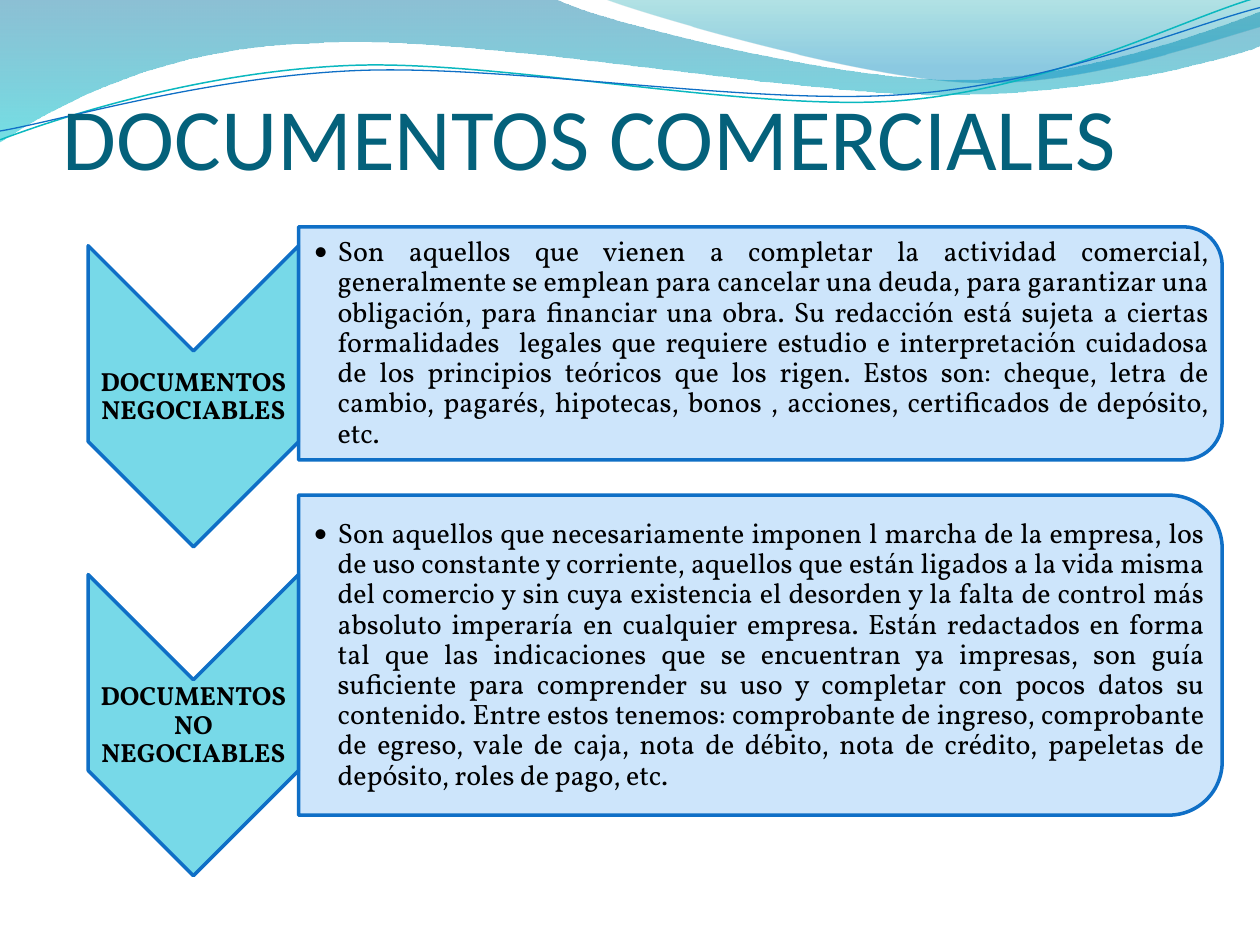
"""Build the slide on negotiable and non-negotiable commercial documents."""
from dataclasses import dataclass
from math import cos, radians, sin
from typing import NamedTuple

from lxml import etree
from pptx import Presentation
from pptx import util as u
from pptx.dml.color import RGBColor
from pptx.enum import shapes as sh, text as tx
from pptx.oxml.ns import qn


@dataclass(frozen=True)
class Theme:
    """Colours, fonts and type sizes."""
    title: str = "04617B"
    ink: str = "000000"
    arrow: str = "77D9E8"
    panel: str = "C8E3FB"
    edge: str = "0F6FC6"
    teal: str = "0AB8BF"
    head: str = "Calibri"
    body: str = "Vollkorn"
    big: float = 50
    mid: float = 16
    small: float = 15


class Box(NamedTuple):
    """A rectangle in inches."""
    x: float
    y: float
    w: float
    h: float


class Stop(NamedTuple):
    """A gradient stop with its opacity in percent."""
    pos: float
    rgb: str
    alpha: int


class Wave(NamedTuple):
    """An outline of points and cubic curves, either filled or stroked."""
    start: tuple
    legs: list
    stops: tuple = ()
    rgb: str = ""
    width: float = 0
    tilt: float = 0


class Topic(NamedTuple):
    """An arrow label with its panel of text."""
    label: str
    note: str
    top: float
    panel: Box


T = Theme()
HUB = (4.99, 0.58)

WAVES = [
    Wave((0, 0), [(4.4, -0.01), (4.76, 0.17, 6.64, 0.63, 7.58, 0.63),
                  (8.53, 0.63, 9.58, 0.26, 10, 0.09), (10.01, 0.36),
                  (9.83, 0.44, 8.7, 0.76, 7.46, 0.75),
                  (6.22, 0.75, 3.82, 0.28, 2.57, 0.34),
                  (1.29, 0.36, 0.46, 0.83, -0.01, 1.13), (0, 0)],
         (Stop(0, "0074A1", 45), Stop(1, "00C6CF", 55))),
    Wave((4.79, -0.01), [(5.09, 0.11, 6.82, 0.62, 7.69, 0.65),
                         (8.56, 0.69, 9.61, 0.32, 10, 0.21), (10, 0), (4.79, -0.01)],
         (Stop(0, "00A1A9", 30), Stop(0.8, "008BBF", 45))),
    Wave((0, 1.11), [(0.48, 0.93, 1.58, 0.57, 2.77, 0.52),
                     (3.95, 0.47, 5.93, 0.89, 7.13, 0.8),
                     (8.33, 0.71, 9.38, 0.15, 9.98, -0.02)],
         rgb=T.teal, width=0.85, tilt=-2.7),
    Wave((0, 1.04), [(0.47, 0.96, 1.64, 0.61, 2.83, 0.56),
                     (4.03, 0.51, 5.97, 0.84, 7.17, 0.75),
                     (8.36, 0.67, 9.41, 0.21, 10, 0.06)],
         rgb=T.edge, width=0.75, tilt=-2.7),
]

TOPICS = [
    Topic("DOCUMENTOS NEGOCIABLES",
          "Son aquellos que vienen a completar la actividad comercial, generalmente se emplean "
          "para cancelar una deuda, para garantizar una obligación, para financiar una obra. Su "
          "redacción está sujeta a ciertas formalidades  legales que requiere estudio e "
          "interpretación cuidadosa de los principios teóricos que los rigen. Estos son: cheque, "
          "letra de cambio, pagarés, hipotecas, bonos , acciones, certificados de depósito, etc. ",
          1.95, Box(2.37, 1.8, 7.33, 1.85)),
    Topic("DOCUMENTOS NO NEGOCIABLES",
          "Son aquellos que necesariamente imponen l marcha de la empresa, los de uso constante "
          "y corriente, aquellos que están ligados a la vida misma del comercio y sin cuya "
          "existencia el desorden y la falta de control más absoluto imperaría en cualquier "
          "empresa. Están redactados en forma tal que las indicaciones que se encuentran ya "
          "impresas, son guía suficiente para comprender su uso y completar con pocos datos su "
          "contenido. Entre estos tenemos: comprobante de ingreso, comprobante de egreso, vale de "
          "caja, nota de débito, nota de crédito, papeletas de depósito, roles de pago, etc.",
          4.56, Box(2.37, 3.93, 7.33, 2.54)),
]


def apply(item, fmt: dict) -> None:
    """Set each attribute named in a dict."""
    for key, val in fmt.items():
        setattr(item, key, val)


def fade(shape, alphas: list) -> None:
    """Give the fill colours of a shape their opacity."""
    for node, val in zip(shape._element.spPr.iter(qn("a:srgbClr")), alphas):
        etree.SubElement(node, qn("a:alpha"), val=str(val * 1000))


def stroke(shape, rgb: str, width: float) -> None:
    """Draw the outline of a shape."""
    shape.line.color.rgb = RGBColor.from_string(rgb)
    shape.line.width = u.Pt(width)


def level(flat: tuple, tilt: float) -> list:
    """Pair up coordinates and undo their tilt about the hub."""
    c, s = cos(radians(tilt)), sin(radians(tilt))
    pairs = [(x - HUB[0], y - HUB[1]) for x, y in zip(flat[::2], flat[1::2])]
    return [(u.Inches(HUB[0] + x * c + y * s), u.Inches(HUB[1] - x * s + y * c))
            for x, y in pairs]


def ripple(slide, wave: Wave) -> None:
    """Draw one wave of the header."""
    legs = [level(leg, wave.tilt) for leg in wave.legs]
    form = slide.shapes.build_freeform(*level(wave.start, wave.tilt)[0])
    form.add_line_segments([leg[-1] for leg in legs], close=bool(wave.stops))
    shape = form.convert_to_shape()
    for node, leg in zip(list(shape._element.spPr.iter(qn("a:lnTo"))), legs):
        if len(leg) == 3:
            node.tag = qn("a:cubicBezTo")
            for i, (x, y) in enumerate(leg[:2]):
                node.insert(i, etree.Element(qn("a:pt"), x=str(x - shape.left),
                                             y=str(y - shape.top)))
    shape.rotation = wave.tilt
    shape.shadow.inherit = False
    if not wave.stops:
        shape.fill.background()
        stroke(shape, wave.rgb, wave.width)
        return
    shape.line.fill.background()
    shape.fill.gradient()
    shape.fill.gradient_angle = 270
    for stop, goal in zip(shape.fill.gradient_stops, wave.stops):
        stop.position = goal.pos
        stop.color.rgb = RGBColor.from_string(goal.rgb)
    fade(shape, [s.alpha for s in wave.stops])


def turned(slide, kind, box: Box, rgb: str, alpha: int = 100) -> None:
    """Draw a preset shape turned a quarter so that it covers box."""
    left, top = box.x + (box.w - box.h) / 2, box.y + (box.h - box.w) / 2
    shape = slide.shapes.add_shape(kind, *map(u.Inches, (left, top, box.h, box.w)))
    shape.rotation = 90
    shape.shadow.inherit = False
    shape.fill.solid()
    shape.fill.fore_color.rgb = RGBColor.from_string(rgb)
    if alpha < 100:
        fade(shape, [alpha])
    stroke(shape, T.edge, 2)


def write(slide, box: Box, words: str, font: dict, rgb: str, para: dict,
          pads: tuple, anchor=tx.MSO_ANCHOR.MIDDLE):
    """Add a text box and return its paragraph."""
    frame = slide.shapes.add_textbox(*map(u.Inches, box)).text_frame
    sides = ("margin_left", "margin_top", "margin_right", "margin_bottom")
    apply(frame, {"word_wrap": True, "vertical_anchor": anchor,
                  **dict(zip(sides, map(u.Inches, pads)))})
    line = frame.paragraphs[0]
    apply(line, para)
    run = line.add_run()
    run.text = words
    apply(run.font, font)
    run.font.color.rgb = RGBColor.from_string(rgb)
    return line


def entry(slide, topic: Topic) -> None:
    """Draw an arrow, its label, and the panel beside it."""
    arrow, panel = Box(0.7, topic.top, 1.67, 2.39), topic.panel
    turned(slide, sh.MSO_SHAPE.CHEVRON, arrow, T.arrow)
    write(slide, Box(0.7, topic.top + 0.84, 1.67, 0.72), topic.label,
          {"name": T.body, "size": u.Pt(T.small), "bold": True}, T.ink,
          {"alignment": tx.PP_ALIGN.CENTER, "line_spacing": 0.9}, (0.01,) * 4)
    turned(slide, sh.MSO_SHAPE.ROUND_2_SAME_RECTANGLE, panel, T.panel, 90)
    gap = panel.h * 0.05
    area = Box(panel.x, panel.y + gap, panel.w - gap, panel.h - 2 * gap)
    line = write(slide, area, topic.note, {"name": T.body, "size": u.Pt(T.mid)}, T.ink,
                 {"alignment": tx.PP_ALIGN.JUSTIFY, "line_spacing": 0.9, "level": 1},
                 (0.12, 0.01, 0.01, 0.01))
    props = line._p.get_or_add_pPr()
    hang = u.Inches(0.19)
    props.set("marL", str(hang))
    props.set("indent", str(-hang))
    etree.SubElement(props, qn("a:buFont"), typeface=T.head)
    etree.SubElement(props, qn("a:buChar"), char="•")


def main() -> None:
    """Build and save the slide."""
    deck = Presentation()
    apply(deck, {"slide_width": u.Inches(10), "slide_height": u.Inches(7.5)})
    slide = deck.slides.add_slide(deck.slide_layouts[6])
    for wave in WAVES:
        ripple(slide, wave)
    write(slide, Box(0.5, 0.47, 9, 1.02), "DOCUMENTOS COMERCIALES",
          {"name": T.head, "size": u.Pt(T.big)}, T.title, {}, (0, 0.05, 0, 0),
          tx.MSO_ANCHOR.BOTTOM)
    for topic in TOPICS:
        entry(slide, topic)
    deck.save("out.pptx")


if __name__ == "__main__":
    main()
